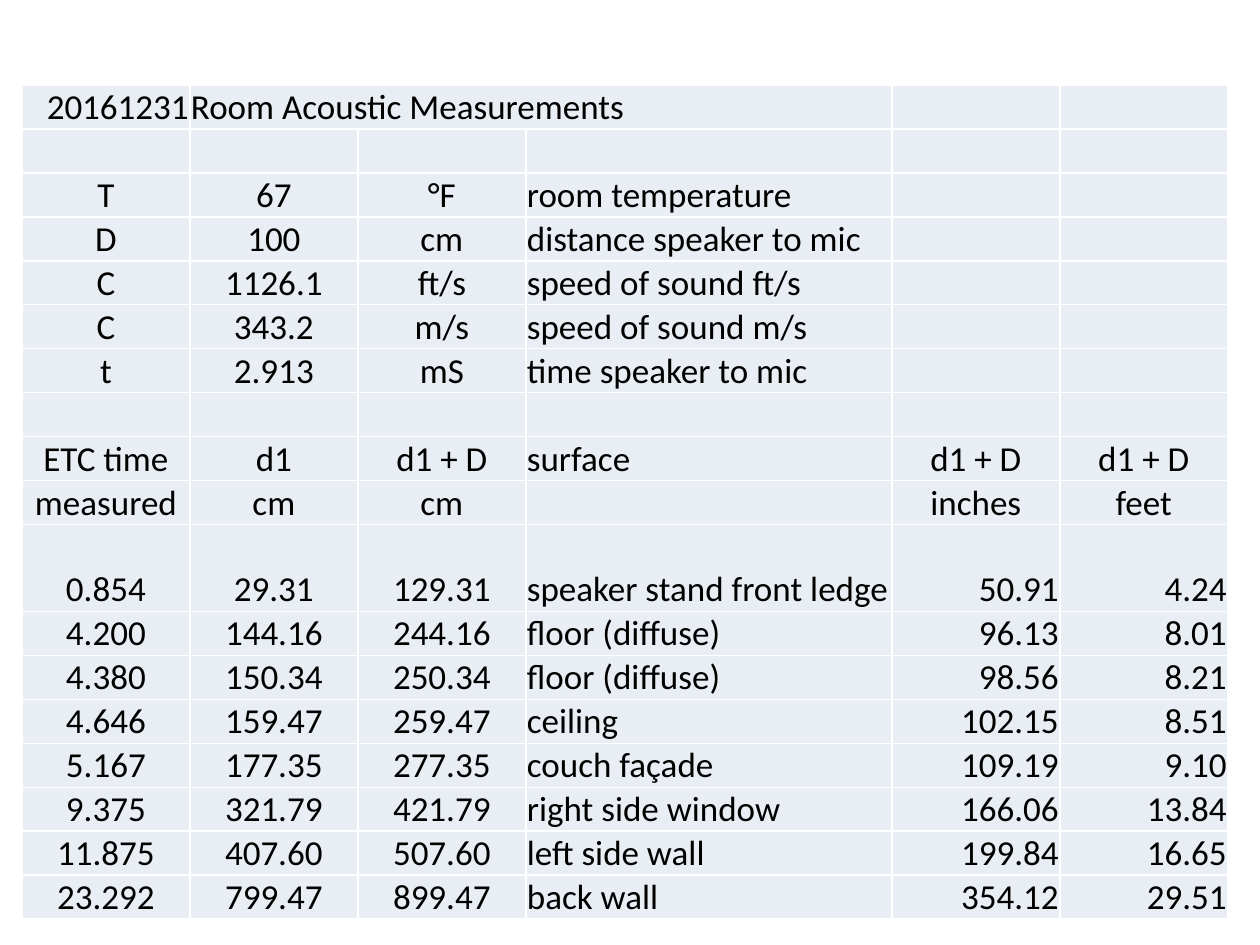
import pptx
import pptx.dml.color
import pptx.enum.text
import pptx.util
from lxml import etree
from pptx.oxml.ns import qn

PX = 914400 // 126
ALIGN = pptx.enum.text.PP_ALIGN

# Content
HEADING = [("20161231", "Room Acoustic Measurements")]
CONSTANTS = [
    ("T", "67", "°F", "room temperature"),
    ("D", "100", "cm", "distance speaker to mic"),
    ("C", "1126.1", "ft/s", "speed of sound ft/s"),
    ("C", "343.2", "m/s", "speed of sound m/s"),
    ("t", "2.913", "mS", "time speaker to mic"),
]
COLUMN_HEADS = [
    ("ETC time", "d1", "d1 + D", "surface", "d1 + D", "d1 + D"),
    ("measured", "cm", "cm", "", "inches", "feet"),
]
REFLECTIONS = [
    ("0.854", "29.31", "129.31", "speaker stand front ledge", "50.91", "4.24"),
    ("4.200", "144.16", "244.16", "floor (diffuse)", "96.13", "8.01"),
    ("4.380", "150.34", "250.34", "floor (diffuse)", "98.56", "8.21"),
    ("4.646", "159.47", "259.47", "ceiling", "102.15", "8.51"),
    ("5.167", "177.35", "277.35", "couch façade", "109.19", "9.10"),
    ("9.375", "321.79", "421.79", "right side window", "166.06", "13.84"),
    ("11.875", "407.60", "507.60", "left side wall", "199.84", "16.65"),
    ("23.292", "799.47", "899.47", "back wall", "354.12", "29.51"),
]
BLANK = [()]
ROWS = HEADING + BLANK + CONSTANTS + BLANK + COLUMN_HEADS + REFLECTIONS
FIRST_REFLECTION = len(ROWS) - len(REFLECTIONS)

# Layout in px
LEFT, TOP = 22, 85
COLUMN_WIDTHS = [168, 168, 168, 366, 168, 168]
ROW_HEIGHT, TALL_ROW_HEIGHT = 44, 87
SURFACE_COLUMN = 3


def color(hex_string):
    return pptx.dml.color.RGBColor.from_string(hex_string)


def alignment(row, column):
    if row == 0:
        return ALIGN.RIGHT if column == 0 else ALIGN.LEFT
    if column == SURFACE_COLUMN:
        return ALIGN.LEFT
    if column > SURFACE_COLUMN and row >= FIRST_REFLECTION:
        return ALIGN.RIGHT
    return ALIGN.CENTER


def add_borders(cell, hex_string, points):
    properties = cell._tc.get_or_add_tcPr()
    for index, side in enumerate(("lnL", "lnR", "lnT", "lnB")):
        line = etree.Element(qn("a:" + side), w=str(pptx.util.Pt(points)))
        fill = etree.SubElement(line, qn("a:solidFill"))
        etree.SubElement(fill, qn("a:srgbClr"), val=hex_string)
        properties.insert(index, line)


def format_cell(cell, text, align):
    cell.fill.solid()
    cell.fill.fore_color.rgb = color("E9EDF4")
    add_borders(cell, "FFFFFF", 1)
    cell.margin_left = cell.margin_right = cell.margin_top = PX
    cell.margin_bottom = 0
    cell.vertical_anchor = pptx.enum.text.MSO_ANCHOR.BOTTOM
    paragraph = cell.text_frame.paragraphs[0]
    if text:
        paragraph.text = text
    paragraph.alignment = align
    paragraph.font.name = "Calibri"
    paragraph.font.size = pptx.util.Pt(20)
    paragraph.font.color.rgb = color("000000")


def main():
    deck = pptx.Presentation()
    deck.slide_width, deck.slide_height = 1260 * PX, 945 * PX
    slide = deck.slides.add_slide(deck.slide_layouts[6])

    # Measurement table
    heights = [ROW_HEIGHT] * len(ROWS)
    heights[FIRST_REFLECTION] = TALL_ROW_HEIGHT
    measurements = slide.shapes.add_table(
        len(ROWS), len(COLUMN_WIDTHS), LEFT * PX, TOP * PX,
        sum(COLUMN_WIDTHS) * PX, sum(heights) * PX).table
    measurements.first_row = measurements.horz_banding = False
    for column, width in zip(measurements.columns, COLUMN_WIDTHS):
        column.width = width * PX
    for row, height in zip(measurements.rows, heights):
        row.height = height * PX

    # Cells, padded with blanks to the full width
    for r, values in enumerate(ROWS):
        for c in range(len(COLUMN_WIDTHS)):
            text = values[c] if c < len(values) else ""
            format_cell(measurements.cell(r, c), text, alignment(r, c))

    # Heading spans three columns
    measurements.cell(0, 1).merge(measurements.cell(0, SURFACE_COLUMN))
    deck.save("out.pptx")


if __name__ == "__main__":
    main()
